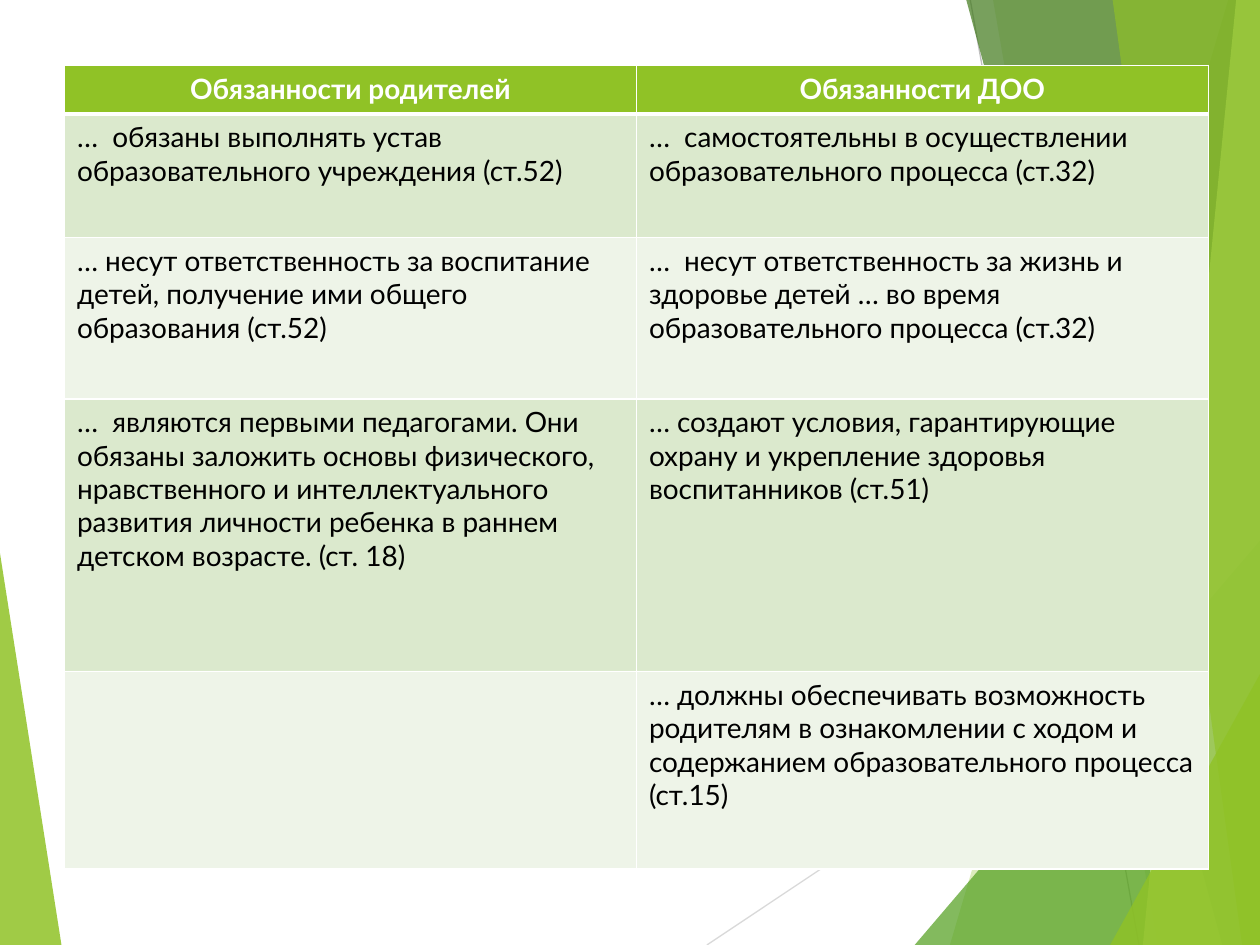
import lxml.etree
import pptx
import pptx.dml.color
import pptx.enum.shapes
import pptx.enum.text
import pptx.oxml
import pptx.oxml.ns
import pptx.util
from dataclasses import dataclass

Cm = pptx.util.Cm
Pt = pptx.util.Pt
RGB = pptx.dml.color.RGBColor.from_string
qn = pptx.oxml.ns.qn


@dataclass
class Theme:
    font: str = "Lato"
    text_size: int = 16
    text: str = "000000"
    header_text: str = "FFFFFF"
    border: str = "FFFFFF"
    green: str = "90C226"
    leaf: str = "54A021"
    forest: str = "3F7819"
    lime: str = "C0E474"
    dark_band: str = "DBE9CD"
    light_band: str = "EEF4E8"
    line_light: str = "D9D9D9"
    line_dark: str = "BFBFBF"


theme = Theme()
WIDTH, HEIGHT = 25.4, 19.05

deck = pptx.Presentation()
deck.slide_width, deck.slide_height = Cm(WIDTH), Cm(HEIGHT)
page = deck.slides.add_slide(deck.slide_layouts[6])


def add_facet(points, color, opacity):
    """Draw a borderless translucent polygon; points in cm, opacity in percent."""
    corners = [(Cm(x), Cm(y)) for x, y in points]
    builder = page.shapes.build_freeform(*corners[0])
    builder.add_line_segments(corners[1:], close=True)
    facet = builder.convert_to_shape()
    facet.shadow.inherit = False
    facet.line.fill.background()
    facet.fill.solid()
    facet.fill.fore_color.rgb = RGB(color)
    color_element = facet.fill._xPr.find(qn("a:solidFill"))[0]
    lxml.etree.SubElement(color_element, qn("a:alpha"), val=str(opacity * 1000))


def add_border(cell, position, side, width):
    """Put a solid border on one side (L, R, T, B) of a cell, ahead of its fill."""
    properties = cell._tc.get_or_add_tcPr()
    border = pptx.oxml.parse_xml(
        f'<a:ln{side} xmlns:a="http://schemas.openxmlformats.org/drawingml/2006/main"'
        f' w="{Pt(width)}"><a:solidFill><a:srgbClr val="{theme.border}"/></a:solidFill></a:ln{side}>'
    )
    properties.insert(position, border)


# Faceted background
add_facet([(0, 11.15), (1.24, HEIGHT), (0, HEIGHT)], theme.green, 85)

rays = [
    (14.25, HEIGHT, WIDTH, 11.61, theme.line_light),
    (19.56, 0, 22.96, HEIGHT, theme.line_dark),
]
for x1, y1, x2, y2, color in rays:
    ray = page.shapes.add_connector(
        pptx.enum.shapes.MSO_CONNECTOR.STRAIGHT, Cm(x1), Cm(y1), Cm(x2), Cm(y2)
    )
    ray.line.color.rgb = RGB(color)
    ray.line.width = Pt(0.75)
    lxml.etree.SubElement(ray._element.spPr, qn("a:effectLst"))

# Each facet runs from its slanted left edge to the right side of the page
right_facets = [
    ((24.76, 0), (19.15, HEIGHT), theme.green, 30),
    ((20.02, 0), (23.34, HEIGHT), theme.green, 20),
    ((WIDTH, 10.9), (18.44, HEIGHT), theme.leaf, 72),
    ((19.48, 0), (24.64, HEIGHT), theme.forest, 70),
    ((24.92, 0), (23.04, HEIGHT), theme.lime, 70),
    ((22.43, 0), (25.04, HEIGHT), theme.green, 65),
    ((WIDTH, 13.59), (22.38, HEIGHT), theme.green, 80),
]
for top, bottom, color, opacity in right_facets:
    add_facet([top, bottom, (WIDTH, HEIGHT), (WIDTH, top[1])], color, opacity)

# Table of duties
duties = [
    ("Обязанности родителей", "Обязанности ДОО"),
    (
        "…  обязаны выполнять устав образовательного учреждения (ст.52)",
        "…  самостоятельны в осуществлении образовательного процесса (ст.32)",
    ),
    (
        "… несут ответственность за воспитание детей, получение ими общего образования (ст.52)",
        "…  несут ответственность за жизнь и здоровье детей … во время "
        "образовательного процесса (ст.32)",
    ),
    (
        "…  являются первыми педагогами. Они обязаны заложить основы физического, "
        "нравственного и интеллектуального развития личности ребенка в раннем "
        "детском возрасте. (ст. 18)",
        "… создают условия, гарантирующие охрану и укрепление здоровья воспитанников (ст.51)",
    ),
    (
        "",
        "… должны обеспечивать возможность родителям в ознакомлении с ходом и "
        "содержанием образовательного процесса (ст.15)",
    ),
]
row_heights = [0.98, 2.49, 3.25, 5.5, 3.98]
column_width = 11.53

table = page.shapes.add_table(
    len(duties), 2, Cm(1.3), Cm(1.32), Cm(2 * column_width), Cm(sum(row_heights))
).table
for column in table.columns:
    column.width = Cm(column_width)

for row_index, (texts, height) in enumerate(zip(duties, row_heights)):
    table.rows[row_index].height = Cm(height)
    is_header = row_index == 0
    band = theme.dark_band if row_index % 2 else theme.light_band
    for column_index, text in enumerate(texts):
        cell = table.cell(row_index, column_index)
        cell.fill.solid()
        cell.fill.fore_color.rgb = RGB(theme.green if is_header else band)
        for position, side in enumerate("LRTB"):
            heavy = (side == "B" and is_header) or (side == "T" and row_index == 1)
            add_border(cell, position, side, 3 if heavy else 1)
        cell.text = text
        para = cell.text_frame.paragraphs[0]
        if is_header:
            para.alignment = pptx.enum.text.PP_ALIGN.CENTER
        para.font.name = theme.font
        para.font.size = Pt(theme.text_size)
        para.font.bold = is_header
        para.font.color.rgb = RGB(theme.header_text if is_header else theme.text)

deck.save("out.pptx")
